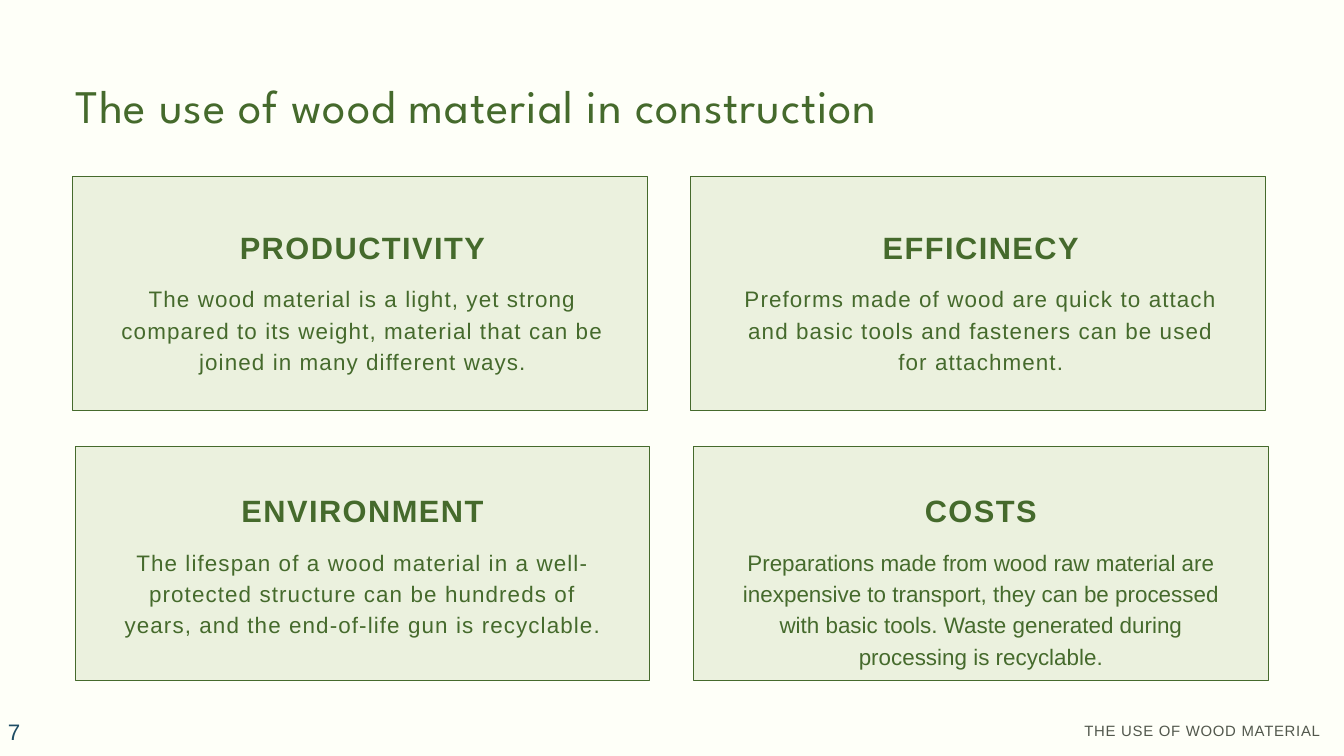
"""Builds the slide on the use of wood material in construction."""
from dataclasses import dataclass

from pptx import Presentation
from pptx.dml.color import RGBColor
from pptx.enum.shapes import MSO_SHAPE
from pptx.enum.text import MSO_ANCHOR, MSO_AUTO_SIZE, PP_ALIGN
from pptx.util import Inches, Pt

CREAM = RGBColor(0xFE, 0xFF, 0xF8)
PALE_GREEN = RGBColor(0xEB, 0xF1, 0xDE)
GREEN = RGBColor(0x45, 0x6A, 0x2C)
GREY = RGBColor(0x52, 0x58, 0x4D)
BLUE = RGBColor(0x1E, 0x4D, 0x65)

RECTANGLE = MSO_SHAPE.RECTANGLE
TOP, MIDDLE = MSO_ANCHOR.TOP, MSO_ANCHOR.MIDDLE
LEFT, CENTER, RIGHT = PP_ALIGN.LEFT, PP_ALIGN.CENTER, PP_ALIGN.RIGHT
NO_FIT = MSO_AUTO_SIZE.NONE

COLUMNS, ROWS = 200, 112.5
TITLE_ONLY = 5

CARDS = [
    ("PRODUCTIVITY", "The wood material is a light, yet strong compared to its weight, "
     "material that can be joined in many different ways.", 1.2),
    ("EFFICINECY", "Preforms made of wood are quick to attach and basic tools and "
     "fasteners can be used for attachment.", 1.2),
    ("ENVIRONMENT", "The lifespan of a wood material in a well-protected structure can be "
     "hundreds of years, and the end-of-life gun is recyclable.", 1.2),
    ("COSTS", "Preparations made from wood raw material are inexpensive to transport, they "
     "can be processed with basic tools. Waste generated during processing is recyclable.", 0),
]


@dataclass
class TextStyle:
    """Look of one kind of text, in points."""
    size: float
    leading: float
    tracking: float
    color: RGBColor = GREEN
    align: PP_ALIGN = CENTER
    bold: bool = False
    font: str = "Arial"


TITLE = TextStyle(50, 66.8, 1, align=LEFT, font="League Spartan")
HEADING = TextStyle(33, 41.2, 1.6, bold=True)
FOOTER = TextStyle(16, 22.4, 0.8, GREY, RIGHT)
PAGE_NUMBER = TextStyle(24, 28.8, 1.2, BLUE, LEFT)


class WoodSlide:
    """Draws elements placed by columns and rows of the slide grid."""

    def __init__(self, deck):
        self.slide = deck.slides.add_slide(deck.slide_layouts[TITLE_ONLY])
        self.column = deck.slide_width / COLUMNS
        self.row = deck.slide_height / ROWS
        background = self.slide.background.fill
        background.solid()
        background.fore_color.rgb = CREAM

    def area(self, column, row, columns, rows):
        """Turns a grid area into left, top, width and height."""
        return (round(column * self.column), round(row * self.row),
                round(columns * self.column), round(rows * self.row))

    def fill_text(self, frame, words, style, anchor=TOP, inset=0):
        """Fills a text frame with one styled run."""
        frame.word_wrap = True
        frame.auto_size = NO_FIT
        frame.vertical_anchor = anchor
        frame.margin_left = frame.margin_right = Inches(inset)
        frame.margin_top = frame.margin_bottom = 0
        paragraph = frame.paragraphs[0]
        paragraph.alignment = style.align
        paragraph.line_spacing = Pt(style.leading)
        run = paragraph.add_run()
        run.text = words
        run.font.name = style.font
        run.font.size = Pt(style.size)
        run.font.bold = style.bold
        run.font.color.rgb = style.color
        run._r.get_or_add_rPr().set("spc", str(round(style.tracking * 100)))

    def title(self, words, *area):
        """Moves the title placeholder and fills it."""
        heading = self.slide.shapes.title
        heading.left, heading.top, heading.width, heading.height = self.area(*area)
        self.fill_text(heading.text_frame, words, TITLE)

    def text(self, words, style, *area, **layout):
        """Adds a text box."""
        box = self.slide.shapes.add_textbox(*self.area(*area))
        self.fill_text(box.text_frame, words, style, **layout)

    def panel(self, *area):
        """Adds an outlined panel."""
        panel = self.slide.shapes.add_shape(RECTANGLE, *self.area(*area))
        panel.shadow.inherit = False
        panel.fill.solid()
        panel.fill.fore_color.rgb = PALE_GREEN
        panel.line.color.rgb = GREEN
        panel.line.width = Pt(0.75)

    def card(self, across, down, heading, body, tracking):
        """Adds a panel with its heading and body."""
        text_left, heading_top = 17 + 92 * across, 33.8 + 39.2 * down
        self.panel(10.8 + 92 * across + 0.4 * down, 26.2 + 40.2 * down, 85.5, 34.8)
        self.text(heading, HEADING, text_left, heading_top, 73.9, 5.6)
        self.text(body, TextStyle(24, 33.6, tracking), text_left, heading_top + 8, 73.9, 14)


def main():
    """Builds and saves the deck."""
    deck = Presentation()
    deck.slide_width, deck.slide_height = Inches(20), Inches(11.25)
    slide = WoodSlide(deck)
    slide.title("The use of wood material in construction", 11.2, 10.5, 177.1, 9.4)
    for position, card in enumerate(CARDS):
        down, across = divmod(position, 2)
        slide.card(across, down, *card)
    slide.text("THE USE OF WOOD MATERIAL", FOOTER, 113.3, 107, 83.2, 2.9)
    slide.text("7", PAGE_NUMBER, 0.2, 106.9, 23.3, 4, anchor=MIDDLE, inset=0.1)
    deck.save("out.pptx")


if __name__ == "__main__":
    main()
